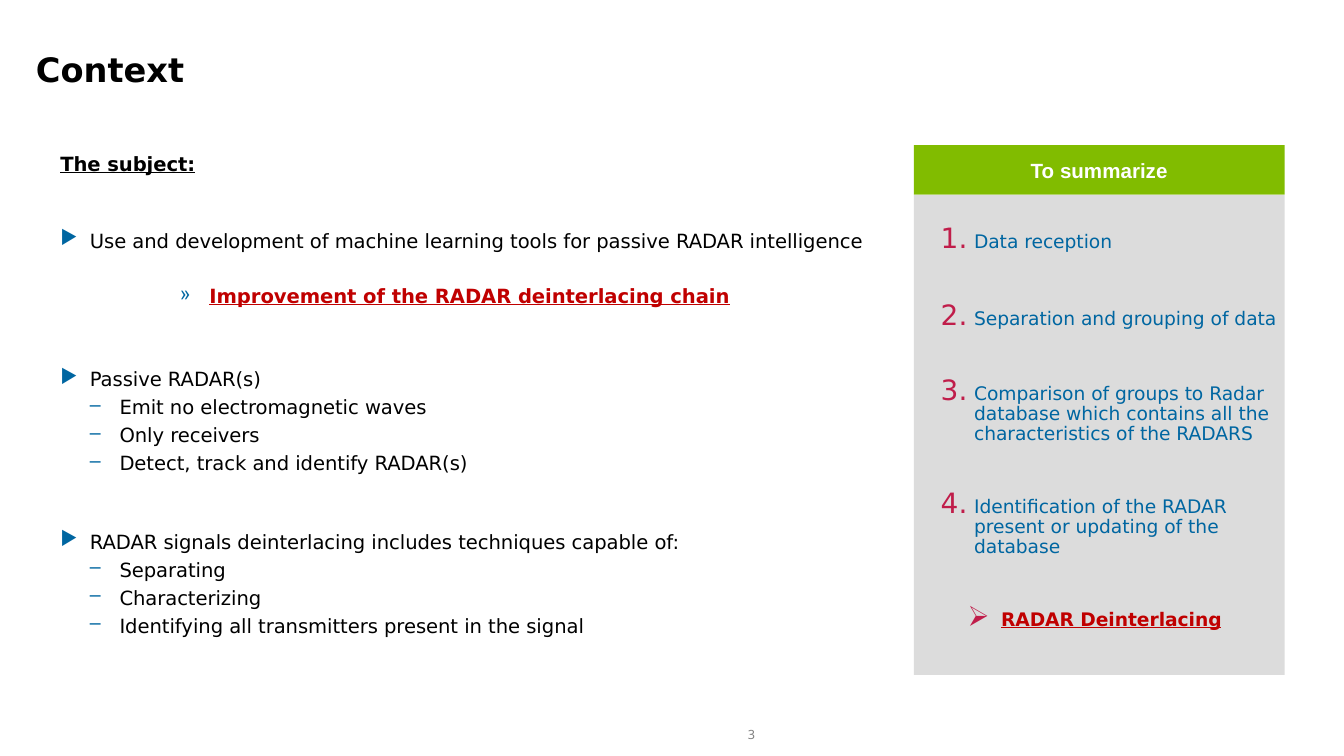
import pptx
import pptx.dml.color
import pptx.enum.shapes
import pptx.enum.text
import pptx.oxml.ns
import lxml.etree
from pptx.util import Cm, Pt

BLACK, WHITE, GREY = "000000", "FFFFFF", "818181"
BLUE, RED, CRIMSON = "0066A1", "C00000", "C01D4A"
GREEN, PANEL = "81BC00", "DCDCDC"
ALIGN = pptx.enum.text.PP_ALIGN
ANCHOR = pptx.enum.text.MSO_ANCHOR


def color(value):
    return pptx.dml.color.RGBColor.from_string(value)


def add_bullet(paragraph, bullet, bullet_color, percent, left, hanging):
    """Give a paragraph a hanging bullet; "1." means automatic numbers."""
    properties = paragraph._p.get_or_add_pPr()
    properties.set("marL", str(Cm(left)))
    properties.set("indent", str(-Cm(hanging)))

    def child(parent, tag, **attributes):
        return lxml.etree.SubElement(parent, pptx.oxml.ns.qn(tag), **attributes)

    child(child(properties, "a:buClr"), "a:srgbClr", val=bullet_color)
    child(properties, "a:buSzPct", val=str(percent * 1000))
    if bullet == "1.":
        child(properties, "a:buAutoNum", type="arabicPeriod")
    else:
        child(properties, "a:buChar", char=bullet)


def write(frame, text, *, size, ink=BLACK, font="DejaVu Sans", bold=False,
          underline=False, align=ALIGN.LEFT, before=0, spacing=None,
          bullet=None, bullet_color=BLUE, percent=100, left=0, hanging=0.56):
    """Fill the empty first paragraph of a frame, or add a paragraph."""
    paragraph = frame.paragraphs[0]
    if paragraph.runs:
        paragraph = frame.add_paragraph()
    paragraph.alignment = align
    paragraph.space_before = Pt(before)
    if spacing:
        paragraph.line_spacing = spacing
    if bullet:
        add_bullet(paragraph, bullet, bullet_color, percent, left, hanging)
    run = paragraph.add_run()
    run.text = text
    run.font.size = Pt(size)
    run.font.name = font
    run.font.bold = bold
    run.font.underline = underline
    run.font.color.rgb = color(ink)


class SlideBuilder:
    def __init__(self, presentation):
        self.slide = presentation.slides.add_slide(presentation.slide_layouts[6])

    def prepare(self, shape, insets, anchor):
        frame = shape.text_frame
        frame.word_wrap = True
        frame.vertical_anchor = anchor
        (frame.margin_left, frame.margin_top,
         frame.margin_right, frame.margin_bottom) = map(Cm, insets)
        return frame

    def text_box(self, left, top, width, height,
                 insets=(0.25, 0.13, 0.25, 0.13), anchor=ANCHOR.TOP):
        shape = self.slide.shapes.add_textbox(*map(Cm, (left, top, width, height)))
        return self.prepare(shape, insets, anchor)

    def rectangle(self, left, top, width, height, fill, insets, anchor):
        shape = self.slide.shapes.add_shape(
            pptx.enum.shapes.MSO_SHAPE.RECTANGLE, *map(Cm, (left, top, width, height)))
        shape.shadow.inherit = False
        shape.fill.solid()
        shape.fill.fore_color.rgb = color(fill)
        shape.line.fill.background()
        return self.prepare(shape, insets, anchor)


def main():
    presentation = pptx.Presentation()
    presentation.slide_width = Cm(25.4)
    presentation.slide_height = Cm(14.28)
    builder = SlideBuilder(presentation)

    # Slide number and title
    number = builder.text_box(13.34, 13.61, 1.73, 0.51, (0.2, 0.1, 0.2, 0.1), ANCHOR.MIDDLE)
    write(number, "3", size=6.8, ink=GREY, font="Noto Sans", align=ALIGN.CENTER)
    title = builder.text_box(0.43, 0.79, 24.26, 1.57)
    write(title, "Context", size=18, bold=True)

    # Subject: each level has its own bullet, indent and format
    levels = {
        "point": dict(bullet="▶", left=0.56),
        "detail": dict(bullet="–", left=1.12),
        "goal": dict(bullet="»", left=2.82, ink=RED, bold=True, underline=True),
    }
    subject = builder.text_box(0.89, 2.74, 15.98, 9.6)
    write(subject, "The subject:", size=10.5, bold=True, underline=True)
    for level, before, text in (
        ("point", 28.5, "Use and development of machine learning tools for passive RADAR intelligence"),
        ("goal", 17, "Improvement of the RADAR deinterlacing chain"),
        ("point", 31.8, "Passive RADAR(s)"),
        ("detail", 2.4, "Emit no electromagnetic waves"),
        ("detail", 2.4, "Only receivers"),
        ("detail", 2.4, "Detect, track and identify RADAR(s)"),
        ("point", 29.6, "RADAR signals deinterlacing includes techniques capable of:"),
        ("detail", 2.4, "Separating"),
        ("detail", 2.4, "Characterizing"),
        ("detail", 2.4, "Identifying all transmitters present in the signal"),
    ):
        write(subject, text, size=10.5, before=before, **levels[level])

    # Summary panel
    header = builder.rectangle(17.27, 2.74, 7.01, 0.94, GREEN, (0.1,) * 4, ANCHOR.MIDDLE)
    write(header, "To summarize", size=11, ink=WHITE, font="Arial", bold=True,
          align=ALIGN.CENTER)
    summary = builder.rectangle(17.27, 3.68, 7.01, 9.07, PANEL,
                                (0.51, 0.71, 0.1, 0.1), ANCHOR.TOP)
    step = dict(size=10, spacing=0.9, bullet_color=CRIMSON, percent=150, hanging=0.63)
    for before, text in (
        (0, "Data reception"),
        (30.3, "Separation and grouping of data"),
        (29.2, "Comparison of groups to Radar database which contains all the "
               "characteristics of the RADARS"),
        (28.2, "Identification of the RADAR present or updating of the database"),
    ):
        write(summary, text, ink=BLUE, before=before, bullet="1.", left=0.63, **step)
    write(summary, "RADAR Deinterlacing", ink=RED, bold=True, underline=True,
          before=28.2, bullet="➢", left=1.14, **step)

    presentation.save("out.pptx")


if __name__ == "__main__":
    main()
